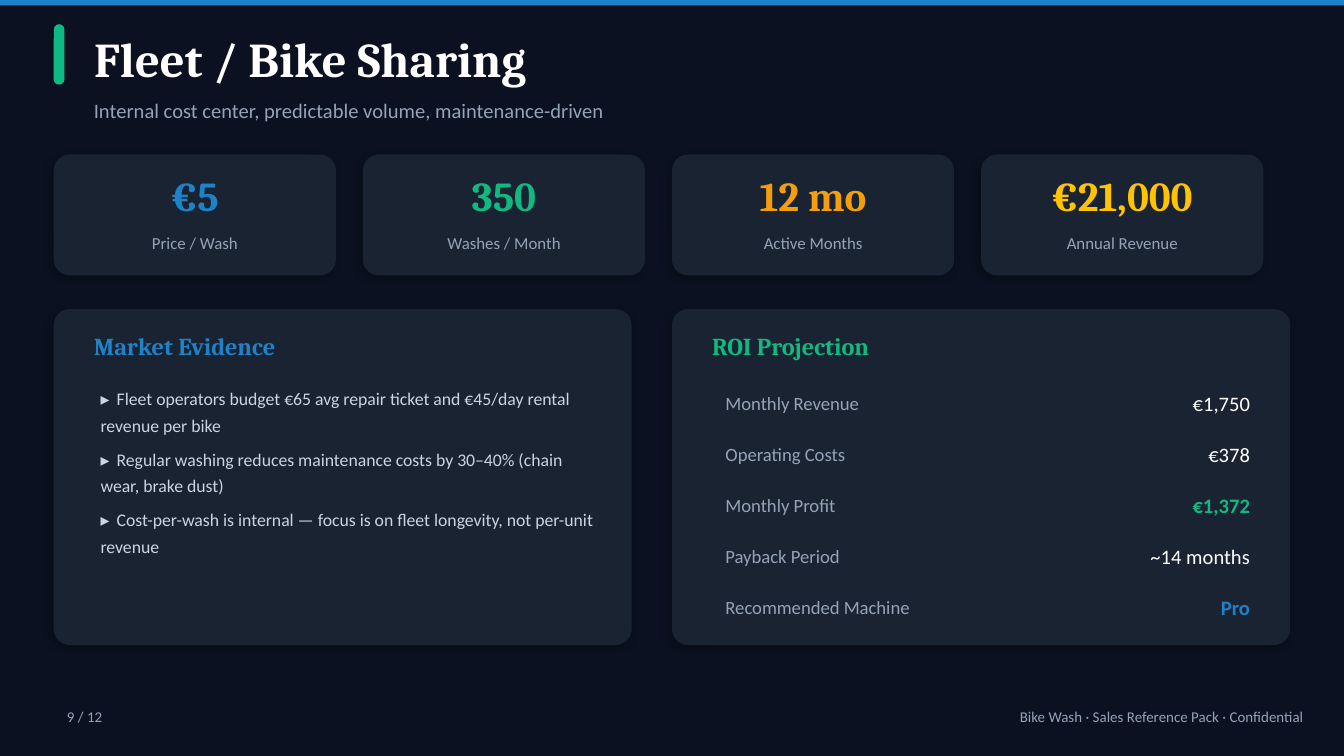
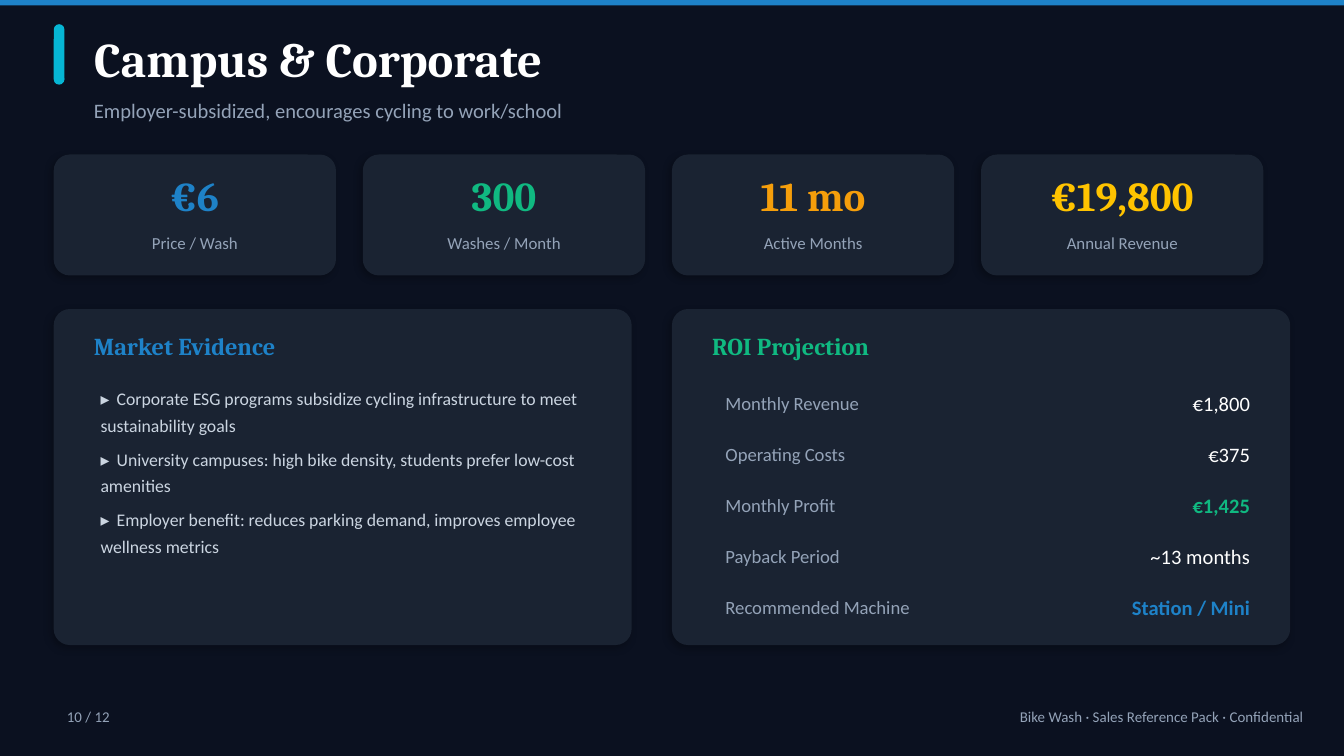
from dataclasses import dataclass

from lxml import etree
from pptx import Presentation
from pptx.dml.color import RGBColor
from pptx.enum.shapes import MSO_SHAPE
from pptx.enum.text import MSO_ANCHOR, MSO_AUTO_SIZE, PP_ALIGN
from pptx.oxml.ns import qn
from pptx.util import Pt

RECT, ROUND = MSO_SHAPE.RECTANGLE, MSO_SHAPE.ROUNDED_RECTANGLE
LEFT, MID, RIGHT = PP_ALIGN.LEFT, PP_ALIGN.CENTER, PP_ALIGN.RIGHT
TOP, CENTER = MSO_ANCHOR.TOP, MSO_ANCHOR.MIDDLE
NO_FIT = MSO_AUTO_SIZE.NONE
TITLE_ONLY = 5

PX = 9144  # 100 px to the inch
WIDE = 1000
PAGES = 12
NOTE = "Bike Wash · Sales Reference Pack · Confidential"


@dataclass(frozen=True)
class Theme:
    back: str = "0B1120"
    card: str = "1A2332"
    white: str = "FFFFFF"
    muted: str = "94A3B8"
    body: str = "CBD5E1"
    blue: str = "1E82C8"
    green: str = "10B981"
    amber: str = "F59E0B"
    gold: str = "FFC300"
    cyan: str = "06B6D4"
    head: str = "Cambria"
    text: str = "Calibri"
    title: float = 26
    stat: float = 22
    panel: float = 13
    lead: float = 11
    row: float = 10
    point: float = 9.5
    label: float = 9
    foot: float = 8


T = Theme()

STATS = [
    ("Price / Wash", T.blue),
    ("Washes / Month", T.green),
    ("Active Months", T.amber),
    ("Annual Revenue", T.gold),
]
ROWS = [
    ("Monthly Revenue", T.white),
    ("Operating Costs", T.white),
    ("Monthly Profit", T.green),
    ("Payback Period", T.white),
    ("Recommended Machine", T.blue),
]
DECK = [
    {
        "page": 9,
        "tint": T.green,
        "title": "Fleet / Bike Sharing",
        "lead": "Internal cost center, predictable volume, maintenance-driven",
        "stats": ["€5", "350", "12 mo", "€21,000"],
        "points": [
            "Fleet operators budget €65 avg repair ticket and €45/day rental revenue per bike",
            "Regular washing reduces maintenance costs by 30–40% (chain wear, brake dust)",
            "Cost-per-wash is internal — focus is on fleet longevity, not per-unit revenue",
        ],
        "roi": ["€1,750", "€378", "€1,372", "~14 months", "Pro"],
    },
    {
        "page": 10,
        "tint": T.cyan,
        "title": "Campus & Corporate",
        "lead": "Employer-subsidized, encourages cycling to work/school",
        "stats": ["€6", "300", "11 mo", "€19,800"],
        "points": [
            "Corporate ESG programs subsidize cycling infrastructure to meet sustainability goals",
            "University campuses: high bike density, students prefer low-cost amenities",
            "Employer benefit: reduces parking demand, improves employee wellness metrics",
        ],
        "roi": ["€1,800", "€375", "€1,425", "~13 months", "Station / Mini"],
    },
]


def scale(*box):
    return [n * PX for n in box]


def style(frame, text, size, color, face=T.text, bold=False, align=LEFT, anchor=CENTER):
    frame.text = text
    frame.word_wrap = True
    frame.auto_size = NO_FIT
    frame.vertical_anchor = anchor
    para = frame.paragraphs[0]
    para.alignment = align
    font = para.runs[0].font
    font.size, font.name, font.bold = Pt(size), face, bold
    font.color.rgb = RGBColor.from_string(color)
    return para


def write(slide, box, *args, **look):
    shape = slide.shapes.add_textbox(*scale(*box))
    return style(shape.text_frame, *args, **look)


def block(slide, box, color, kind=RECT, curve=0):
    """Add a plain filled shape; curve is the corner radius in px."""
    shape = slide.shapes.add_shape(kind, *scale(*box))
    shape.shadow.inherit = False
    shape.fill.solid()
    shape.fill.fore_color.rgb = RGBColor.from_string(color)
    shape.line.fill.background()
    if curve:
        shape.adjustments[0] = curve / min(box[2:])
    return shape


def card(slide, box):
    """Add a rounded card with a soft shadow."""
    shape = block(slide, box, T.card, ROUND, 12)
    effects = shape._element.spPr.find(qn("a:effectLst"))
    shade = etree.SubElement(effects, qn("a:outerShdw"), blurRad=str(Pt(4)),
                             dist=str(Pt(2)), dir=str(135 * 60000),
                             algn="bl", rotWithShape="0")
    tone = etree.SubElement(shade, qn("a:srgbClr"), val="000000")
    etree.SubElement(tone, qn("a:alpha"), val="25000")


def frame(slide, page):
    """Add the background, top band and footer."""
    slide.background.fill.solid()
    slide.background.fill.fore_color.rgb = RGBColor.from_string(T.back)
    block(slide, (0, 0, WIDE, 4), T.blue)
    write(slide, (40, 518, 120, 30), f"{page} / {PAGES}", T.foot, T.muted)
    write(slide, (500, 518, 480, 30), NOTE, T.foot, T.muted, align=RIGHT)


def header(slide, box, data):
    x, y, w, h = box
    block(slide, (x, y, 8, 45), data["tint"], ROUND, 4)
    title = slide.shapes.title
    title.left, title.top, title.width, title.height = scale(x + 20, y, w - 20, 50)
    style(title.text_frame, data["title"], T.title, T.white, T.head, True)
    write(slide, (x + 20, y + 50, w - 20, h - 50), data["lead"], T.lead, T.muted)


def stats(slide, box, values):
    x, y, w, h = box
    gap = 20
    wide = (w - gap * (len(STATS) - 1)) // len(STATS)
    for i, ((label, color), value) in enumerate(zip(STATS, values)):
        left = x + i * (wide + gap)
        card(slide, (left, y, wide, h))
        write(slide, (left, y + 8, wide, 45), value, T.stat, color, T.head, True, MID)
        write(slide, (left, y + 48, wide, 35), label, T.label, T.muted, align=MID)


def panel(slide, box, name, color, wide):
    """Add a card with a heading."""
    x, y = box[:2]
    card(slide, box)
    write(slide, (x + 20, y + 10, wide, 35), name, T.panel, color, T.head, True)


def market(slide, box, points):
    x, y, w, _ = box
    panel(slide, box, "Market Evidence", T.blue, 400)
    for i, point in enumerate(points):
        para = write(slide, (x + 25, y + 50 + i * 45, w - 40, 42),
                     f"▸\t{point}", T.point, T.body, anchor=TOP)
        para.line_spacing = 1.25
        tabs = etree.SubElement(para._p.get_or_add_pPr(), qn("a:tabLst"))
        etree.SubElement(tabs, qn("a:tab"), pos=str(12 * PX), algn="l")


def roi(slide, box, values):
    x, y, w, _ = box
    panel(slide, box, "ROI Projection", T.green, w - 40)
    for i, ((label, color), value) in enumerate(zip(ROWS, values)):
        top = y + 55 + i * 38
        write(slide, (x + 30, top, 220, 30), label, T.row, T.muted)
        write(slide, (x + 250, top, w - 270, 30), value, T.lead, color,
              bold=color != T.white, align=RIGHT)


def segment(deck, data):
    """Add one market segment slide."""
    slide = deck.slides.add_slide(deck.slide_layouts[TITLE_ONLY])
    frame(slide, data["page"])
    header(slide, (40, 18, 620, 78), data)
    stats(slide, (40, 115, 900, 90), data["stats"])
    market(slide, (40, 230, 430, 250), data["points"])
    roi(slide, (500, 230, 460, 250), data["roi"])


def main():
    deck = Presentation()
    deck.slide_width = WIDE * PX
    deck.slide_height = WIDE * PX * 9 // 16
    for data in DECK:
        segment(deck, data)
    deck.save("out.pptx")


if __name__ == "__main__":
    main()
